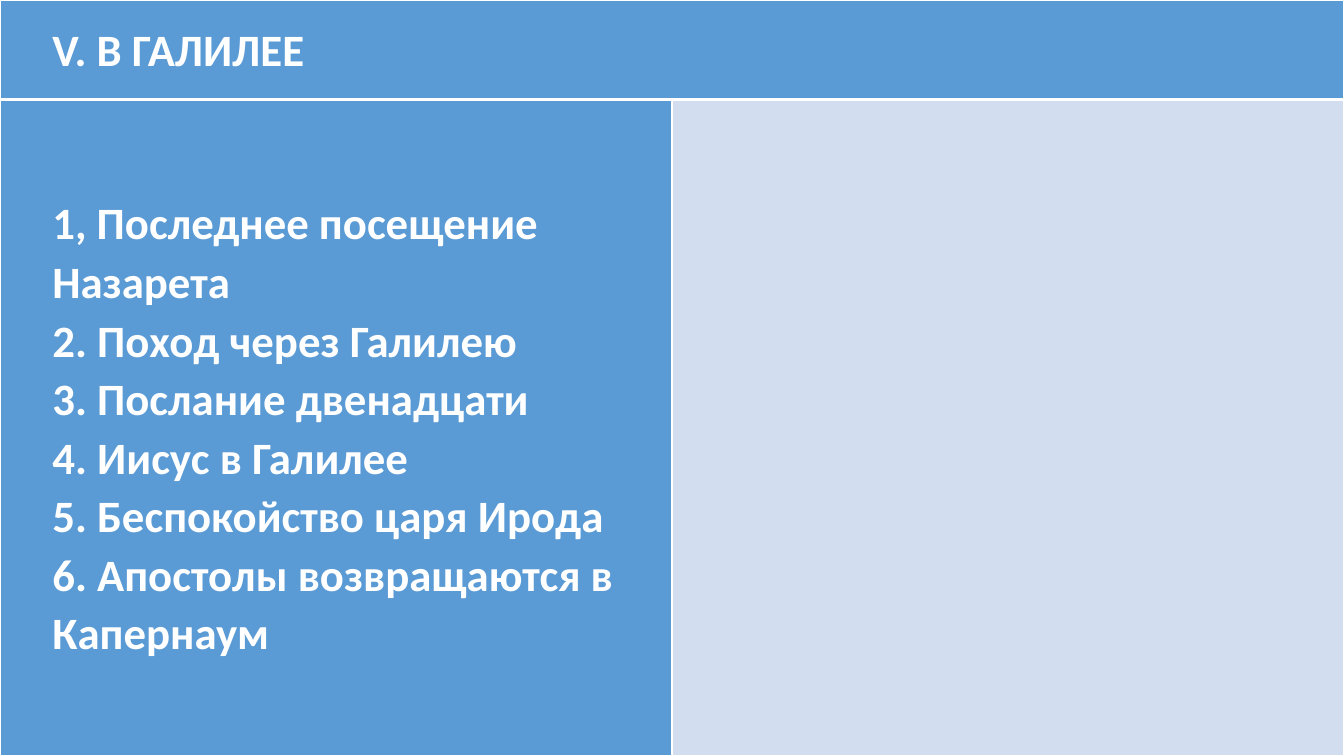
from dataclasses import dataclass

from lxml.etree import SubElement
from pptx import Presentation
from pptx.dml.color import RGBColor
from pptx.enum.text import MSO_ANCHOR, PP_ALIGN
from pptx.oxml.ns import qn
from pptx.table import _Cell
from pptx.util import Cm, Pt

COLORS = {"white": "FFFFFF", "blue": "5B9BD5", "pale": "D2DEEF"}
WIDTH, HEIGHT, HEADER = 33.87, 19.05, 2.51
TOPICS = (
    "1, Последнее посещение Назарета",
    "2. Поход через Галилею",
    "3. Послание двенадцати",
    "4. Иисус в Галилее",
    "5. Беспокойство царя Ирода",
    "6. Апостолы возвращаются в Капернаум",
)


@dataclass(frozen=True)
class CellItem:
    row: int
    col: int
    fill: str
    lines: tuple[str, ...] = ()
    space_after: float = 0
    top: float = 1
    bottom: float = 1


ITEMS = (
    CellItem(0, 0, "blue", ("V. В ГАЛИЛЕЕ",), bottom=3),
    CellItem(0, 1, "blue", bottom=3),
    CellItem(1, 0, "blue", TOPICS, space_after=8, top=3),
    CellItem(1, 1, "pale", top=3),
)


def set_borders(cell: _Cell, top: float, bottom: float) -> None:
    tcPr = cell._tc.get_or_add_tcPr()
    for side, width in (("L", 1), ("R", 1), ("T", top), ("B", bottom)):
        ln = SubElement(tcPr, qn(f"a:ln{side}"), w=str(Pt(width)))
        fill = SubElement(ln, qn("a:solidFill"))
        SubElement(fill, qn("a:srgbClr"), val=COLORS["white"])


def write_text(cell: _Cell, lines: tuple[str, ...], *, size: float = 32,
               font: str = "Calibri", color: str = "white", bold: bool = True,
               indent: float = 1.27, spacing: float = 1.07,
               space_after: float = 0) -> None:
    p = cell.text_frame.paragraphs[0]
    p.alignment = PP_ALIGN.LEFT
    p.line_spacing = spacing
    p.space_after = Pt(space_after)
    pPr = p._p.get_or_add_pPr()
    pPr.set("marL", str(Cm(indent)))
    pPr.set("indent", "0")
    for i, line in enumerate(lines):
        if i:
            p.add_line_break()
        r = p.add_run()
        r.text = line
        r.font.size = Pt(size)
        r.font.name = font
        r.font.bold = bold
        r.font.color.rgb = RGBColor.from_string(COLORS[color])


def draw_cell(cell: _Cell, item: CellItem) -> None:
    set_borders(cell, item.top, item.bottom)
    cell.fill.solid()
    cell.fill.fore_color.rgb = RGBColor.from_string(COLORS[item.fill])
    cell.vertical_anchor = MSO_ANCHOR.MIDDLE
    cell.margin_left = cell.margin_right = Cm(0.05)
    cell.margin_top = cell.margin_bottom = Cm(0.05)
    if item.lines:
        write_text(cell, item.lines, space_after=item.space_after)


def main() -> None:
    prs = Presentation()
    prs.slide_width, prs.slide_height = Cm(WIDTH), Cm(HEIGHT)
    s = prs.slides.add_slide(prs.slide_layouts[6])
    table = s.shapes.add_table(2, 2, 0, 0, Cm(WIDTH), Cm(HEIGHT)).table
    table.first_row = table.horz_banding = False
    table.rows[0].height = Cm(HEADER)
    table.rows[1].height = Cm(HEIGHT - HEADER)
    table.cell(0, 0).merge(table.cell(0, 1))
    for item in ITEMS:
        draw_cell(table.cell(item.row, item.col), item)
    prs.save("out.pptx")


if __name__ == "__main__":
    main()
